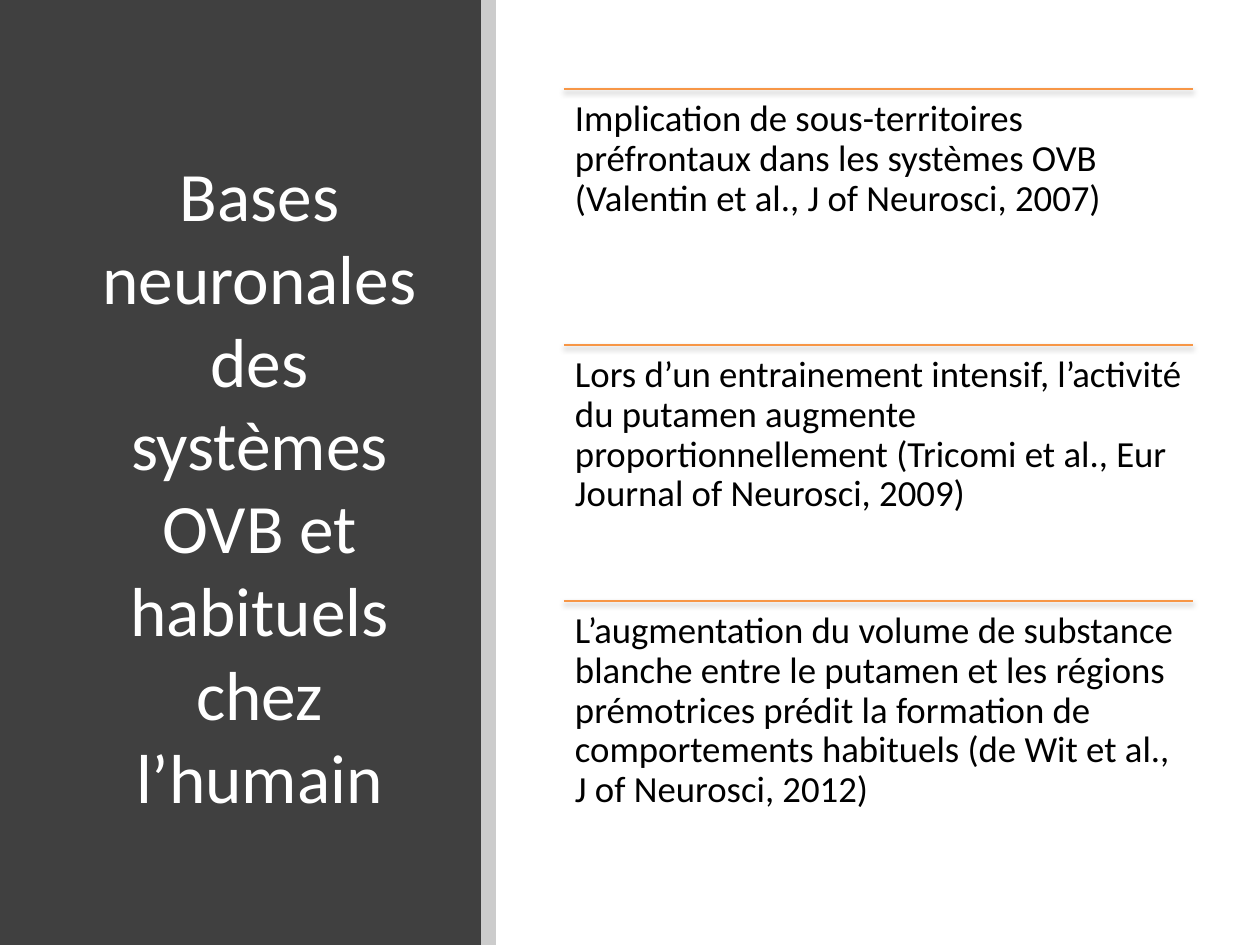
from lxml.etree import fromstring
from pptx import Presentation
from pptx.dml.color import RGBColor
from pptx.enum.shapes import MSO_CONNECTOR, MSO_SHAPE
from pptx.enum.text import MSO_ANCHOR, MSO_AUTO_SIZE, PP_ALIGN
from pptx.oxml import parse_xml
from pptx.oxml.ns import nsdecls, qn
from pptx.util import Emu, Pt

TITLE = "Bases neuronales des systèmes OVB et habituels chez l’humain"
FINDINGS = [
    "Implication de sous-territoires préfrontaux dans les systèmes OVB "
    "(Valentin et al., J of Neurosci, 2007)",
    "Lors d’un entrainement intensif, l’activité du putamen augmente "
    "proportionnellement (Tricomi et al., Eur Journal of Neurosci, 2009)",
    "L’augmentation du volume de substance blanche entre le putamen et les régions "
    "prémotrices prédit la formation de comportements habituels "
    "(de Wit et al., J of Neurosci, 2012)",
]
# left, width, colour, opacity in percent
BANDS = [(0, 481, "404040", 100), (481, 15, "000000", 20)]

SLIDE_W, SLIDE_H = 1260, 945
TITLE_BOX = (87, 112, 345, 745)
LIST_LEFT, LIST_TOP, LIST_W, ROW_H = 564, 89, 629, 256
INSET = 11

TITLE_FRAME = {"word_wrap": True, "auto_size": MSO_AUTO_SIZE.NONE,
               "vertical_anchor": MSO_ANCHOR.MIDDLE}
FINDING_FRAME = {"word_wrap": True, "auto_size": MSO_AUTO_SIZE.NONE,
                 "vertical_anchor": MSO_ANCHOR.TOP}
TITLE_PARAGRAPH = {"alignment": PP_ALIGN.CENTER}
FINDING_PARAGRAPH = {"alignment": PP_ALIGN.LEFT, "line_spacing": 0.9}

RULE_SHADOW = (
    f'<a:effectLst {nsdecls("a")}>'
    '<a:outerShdw blurRad="40000" dist="23000" dir="5400000" rotWithShape="0">'
    '<a:srgbClr val="000000"><a:alpha val="35000"/></a:srgbClr>'
    '</a:outerShdw></a:effectLst>'
)


def px(value):
    return Emu(value * 914400 // 126)


def rgb(hex_code):
    return RGBColor.from_string(hex_code)


def apply(target, values):
    for name, value in values.items():
        setattr(target, name, value)


def write(frame, text, frame_format, paragraph_format, size, colour):
    apply(frame, frame_format)
    frame.text = text
    paragraph = frame.paragraphs[0]
    apply(paragraph, paragraph_format)
    font = paragraph.runs[0].font
    apply(font, {"name": "Calibri", "size": Pt(size)})
    font.color.rgb = rgb(colour)


def add_band(slide, left, width, colour, opacity):
    band = slide.shapes.add_shape(MSO_SHAPE.RECTANGLE, px(left), 0, px(width), px(SLIDE_H))
    band.shadow.inherit = False
    band.line.fill.background()
    band.fill.solid()
    band.fill.fore_color.rgb = rgb(colour)
    if opacity < 100:
        colour_element = band._element.spPr.find(f".//{qn('a:srgbClr')}")
        colour_element.append(
            parse_xml(f'<a:alpha {nsdecls("a")} val="{opacity * 1000}"/>'))


def add_finding(slide, text, top):
    rule = slide.shapes.add_connector(
        MSO_CONNECTOR.STRAIGHT, px(LIST_LEFT), px(top), px(LIST_LEFT + LIST_W), px(top))
    rule.line.color.rgb = rgb("F79646")
    rule.line.width = Pt(0.75)
    rule._element.spPr.append(parse_xml(RULE_SHADOW))

    box = slide.shapes.add_textbox(px(LIST_LEFT), px(top), px(LIST_W), px(ROW_H))
    margins = {f"margin_{side}": px(INSET) for side in ("left", "top", "right", "bottom")}
    write(box.text_frame, text, FINDING_FRAME | margins, FINDING_PARAGRAPH, 21, "000000")


def main():
    presentation = Presentation()
    apply(presentation, {"slide_width": px(SLIDE_W), "slide_height": px(SLIDE_H)})
    slide = presentation.slides.add_slide(presentation.slide_layouts[5])

    for band in BANDS:
        add_band(slide, *band)

    title = slide.shapes.title
    apply(title, dict(zip(("left", "top", "width", "height"), map(px, TITLE_BOX))))
    write(title.text_frame, TITLE, TITLE_FRAME, TITLE_PARAGRAPH, 39.6, "FFFFFF")
    slide.shapes._spTree.append(title._element)  # in front of the bands

    for row, finding in enumerate(FINDINGS):
        add_finding(slide, finding, LIST_TOP + row * ROW_H)

    presentation.save("out.pptx")


if __name__ == "__main__":
    main()
